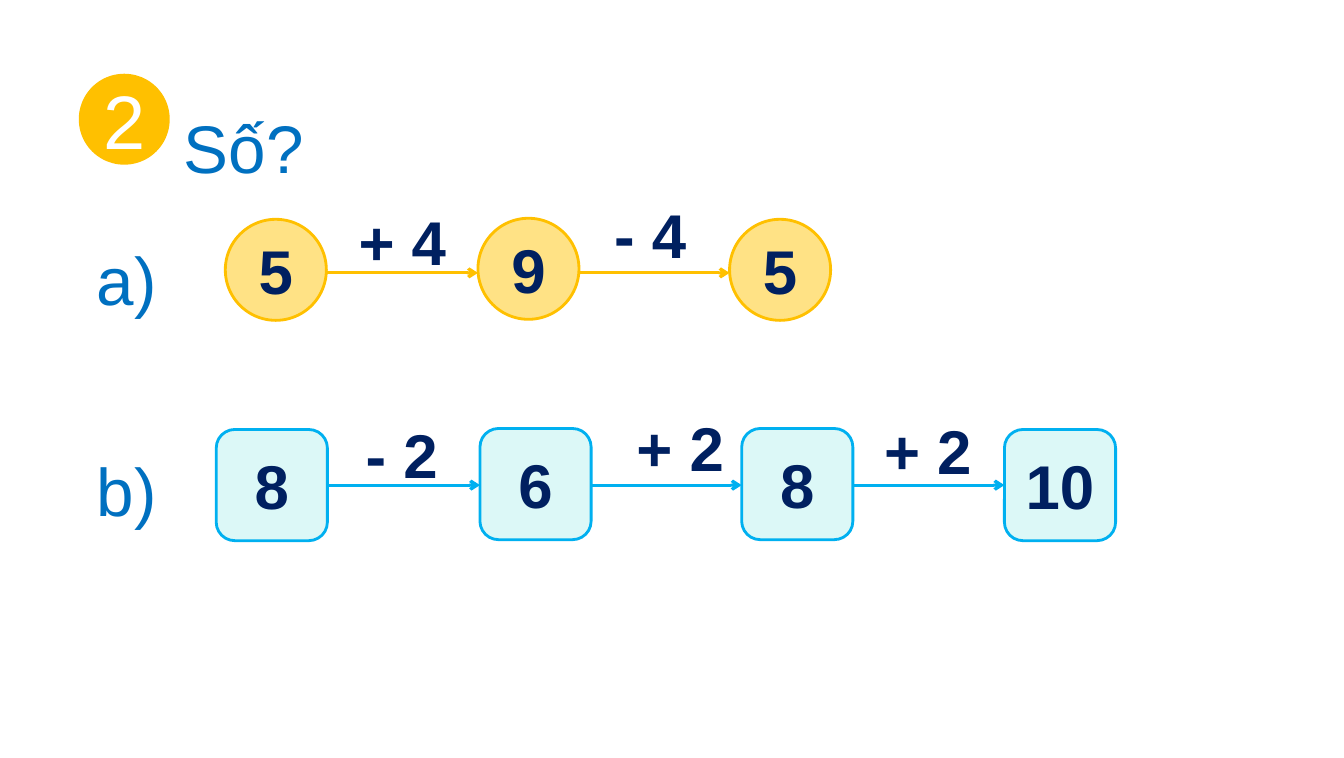
"""Build the number chain exercise slide."""
from dataclasses import dataclass

from lxml.etree import SubElement
from pptx import Presentation
from pptx.dml.color import RGBColor
from pptx.enum.shapes import MSO_CONNECTOR as Link, MSO_SHAPE as Kind
from pptx.enum.text import MSO_ANCHOR as Anchor, PP_ALIGN as Align
from pptx.oxml.ns import qn
from pptx.util import Inches, Pt

BLUE, NAVY, GOLD, WHITE = "0070C0", "002060", "FFC000", "FFFFFF"


@dataclass
class Node:
    text: str
    left: float
    top: float


@dataclass
class Label:
    text: str
    left: float
    top: float
    width: float = 1.87
    height: float = 1.07
    size: int = 44
    color: str = NAVY
    bold: bool = True


@dataclass
class Chain:
    kind: Kind
    size: float
    fill: str
    line: str
    axis: float
    nodes: list[Node]
    steps: list[Label]


CHAINS = [
    Chain(Kind.OVAL, 1, "FFE285", GOLD, 2.7,
          [Node("5", 2.23, 2.17), Node("9", 4.73, 2.16), Node("5", 7.22, 2.17)],
          [Label("+ 4", 3.45, 1.6), Label("- 4", 5.98, 1.53, height=1.21)]),
    Chain(Kind.ROUNDED_RECTANGLE, 1.1, "DCF8F7", "00B0F0", 4.8,
          [Node("8", 2.14, 4.25), Node("6", 4.75, 4.24),
           Node("8", 7.34, 4.24), Node("10", 9.94, 4.25)],
          [Label("- 2", 3.52, 3.71), Label("+ 2", 6.2, 3.64),
           Label("+ 2", 8.65, 3.67)]),
]

HEADS = [
    Label("Số?", 1.72, 0.6, 11.93, 1.31, 48, BLUE, False),
    Label("a)", 0.86, 1.91, 1.33, 1.16, 48, BLUE, False),
    Label("b)", 0.86, 4, 1.33, 1.16, 48, BLUE, False),
]


def rgb(color: str) -> RGBColor:
    """Turn a hex string into a colour."""
    return RGBColor.from_string(color)


def write(shape, text: str, size: int, color: str, bold: bool, align: Align):
    """Set one styled paragraph in a shape and return it."""
    frame = shape.text_frame
    frame.word_wrap = True
    frame.text = text
    para = frame.paragraphs[0]
    para.alignment = align
    font = para.runs[0].font
    font.name, font.size, font.bold = "Arial", Pt(size), bold
    font.color.rgb = rgb(color)
    return para


def add_label(slide, label: Label) -> None:
    """Add a text box with wide line spacing."""
    box = slide.shapes.add_textbox(Inches(label.left), Inches(label.top),
                                   Inches(label.width), Inches(label.height))
    para = write(box, label.text, label.size, label.color, label.bold, Align.JUSTIFY)
    para.line_spacing = 1.5


def add_node(slide, node: Node, kind: Kind, side: float, fill: str,
             line: str = "", size: int = 44, color: str = NAVY,
             bold: bool = True) -> None:
    """Add a filled shape with a centred number."""
    shape = slide.shapes.add_shape(kind, Inches(node.left), Inches(node.top),
                                   Inches(side), Inches(side))
    shape.shadow.inherit = False
    shape.fill.solid()
    shape.fill.fore_color.rgb = rgb(fill)
    if line:
        shape.line.color.rgb = rgb(line)
        shape.line.width = Pt(2)
    else:
        shape.line.fill.background()
    shape.text_frame.vertical_anchor = Anchor.MIDDLE
    write(shape, node.text, size, color, bold, Align.CENTER)


def add_arrow(slide, start: float, end: float, axis: float, color: str) -> None:
    """Add a level arrow between two nodes."""
    arrow = slide.shapes.add_connector(Link.STRAIGHT, Inches(start), Inches(axis),
                                       Inches(end), Inches(axis))
    arrow.line.color.rgb = rgb(color)
    arrow.line.width = Pt(2.25)
    props = arrow.element.spPr
    SubElement(props.find(qn("a:ln")), qn("a:tailEnd"), type="arrow")
    SubElement(props, qn("a:effectLst"))


def add_chain(slide, chain: Chain) -> None:
    """Add the arrows, nodes and step labels of one chain."""
    for left, right in zip(chain.nodes, chain.nodes[1:]):
        add_arrow(slide, left.left + chain.size, right.left, chain.axis, chain.line)
    for node in chain.nodes:
        add_node(slide, node, chain.kind, chain.size, chain.fill, chain.line)
    for step in chain.steps:
        add_label(slide, step)


def main() -> None:
    """Build and save the slide."""
    deck = Presentation()
    deck.slide_width, deck.slide_height = Inches(13.3), Inches(7.5)
    slide = deck.slides.add_slide(deck.slide_layouts[6])
    add_node(slide, Node("2", 0.78, 0.73), Kind.OVAL, 0.9, GOLD,
             size=54, color=WHITE, bold=False)
    for head in HEADS:
        add_label(slide, head)
    for chain in CHAINS:
        add_chain(slide, chain)
    deck.save("out.pptx")


if __name__ == "__main__":
    main()
